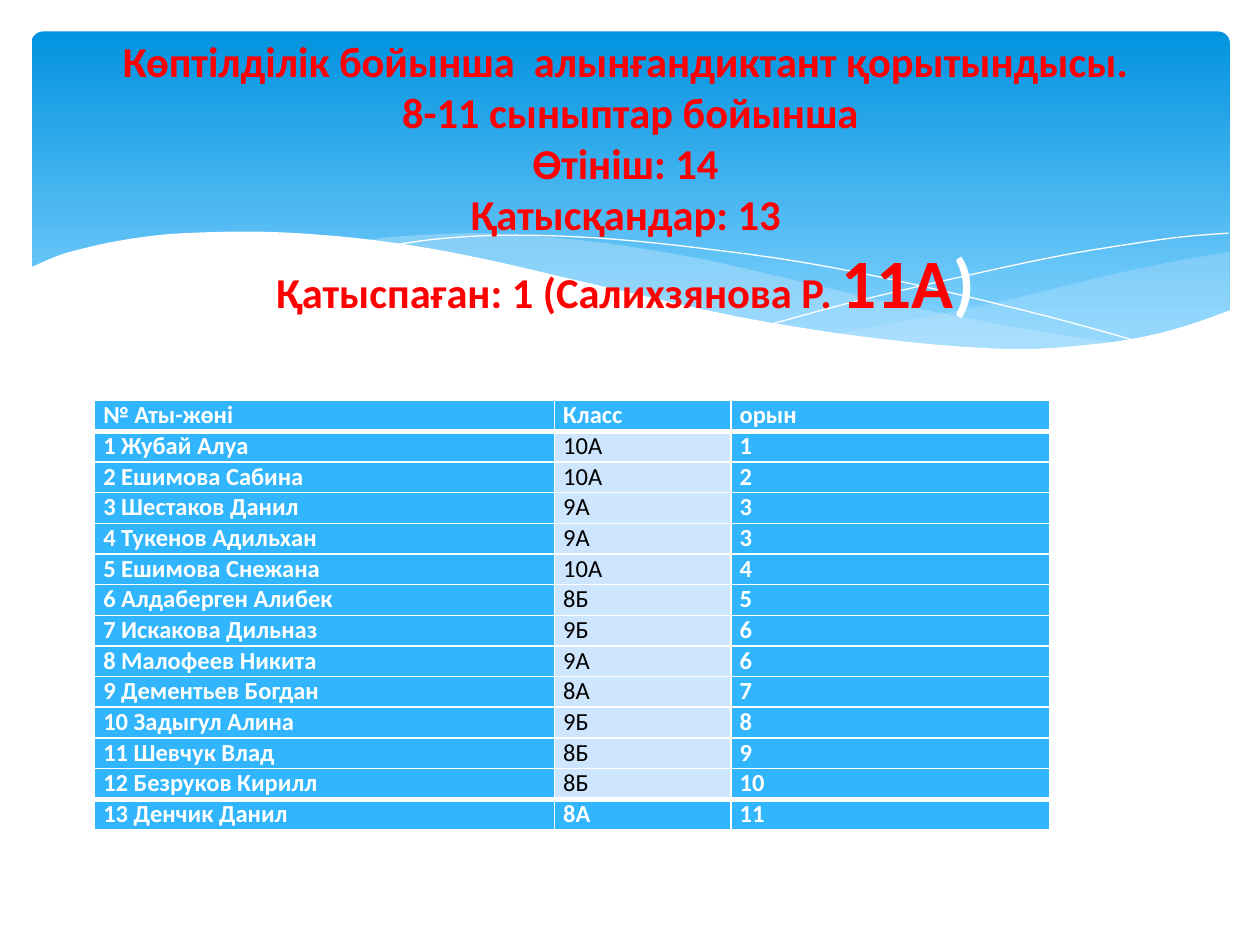
from lxml.etree import SubElement
from pptx import Presentation
from pptx.dml.color import RGBColor
from pptx.enum.shapes import MSO_SHAPE
from pptx.enum.text import MSO_ANCHOR, PP_ALIGN
from pptx.oxml.ns import qn
from pptx.util import Inches, Pt

BACK_TOP = [(9.76, 2), (9.35, 2.07), (8.91, 2.16), (8.61, 2.23), (8.05, 2.37),
            (7.53, 2.48), (7.06, 2.57), (6.61, 2.65)]
BACK_BOTTOM = [(6.61, 2.65), (7.05, 2.71), (7.57, 2.76), (8.03, 2.78), (8.44, 2.77),
               (8.81, 2.73), (9.13, 2.67), (9.42, 2.59), (9.76, 2.47)]
MIDDLE_TOP = [(8.93, 2.73), (8.37, 2.65), (7.75, 2.54), (7.06, 2.4), (6.29, 2.22),
              (5.69, 2.08), (5.14, 1.98), (4.65, 1.91), (4.2, 1.87), (3.8, 1.85),
              (3.44, 1.86), (3.13, 1.88), (2.86, 1.91)]
MIDDLE_BOTTOM = [(2.86, 1.91), (3.42, 1.99), (4.04, 2.11), (4.91, 2.32), (5.66, 2.48),
                 (6.34, 2.61), (6.95, 2.7), (7.48, 2.76), (7.96, 2.78), (8.48, 2.77),
                 (8.93, 2.73)]
LONG_LINE = [(3.09, 1.95), (3.44, 1.9), (3.87, 1.87), (4.33, 1.87), (4.89, 1.9),
             (5.56, 1.97), (6.36, 2.08), (7.27, 2.26), (8.31, 2.51), (9.07, 2.72)]
SHORT_LINE = [(6.13, 2.57), (6.72, 2.41), (7.48, 2.23), (8.36, 2.04), (8.95, 1.94),
              (9.38, 1.88), (9.75, 1.85)]
FRONT_TOP = [(9.77, 2.46), (9.4, 2.59), (8.99, 2.69), (8.5, 2.75), (8.09, 2.77),
             (7.61, 2.75), (7.08, 2.7), (6.48, 2.62), (5.79, 2.5), (5.03, 2.33),
             (4.47, 2.2), (3.91, 2.07), (3.4, 1.97), (2.92, 1.9), (2.5, 1.86),
             (2.11, 1.84), (1.77, 1.84), (1.32, 1.86), (0.95, 1.91), (0.67, 1.97),
             (0.46, 2.03), (0.23, 2.13)]
FRONT_CORNERS = [(0.23, 3.29), (9.77, 3.29)]

RED = {"size": 24.3, "color": "FF0000", "bold": True}
BIG = {**RED, "size": 39.6}
TITLE = [
    [("Көптілділік бойынша  алынғандиктант қорытындысы.", RED)],
    [(" 8-11 сыныптар бойынша", RED)],
    [("Өтініш: 14", RED)],
    [("Қатысқандар: 13", RED)],
    [("Қатыспаған: 1 (Салихзянова Р. ", RED), ("11А", BIG), (")", {**BIG, "color": "FFFFFF"})],
]
ROWS = [
    ("№ Аты-жөні", "Класс", "орын"),
    ("1 Жубай Алуа", "10А", "1"),
    ("2 Ешимова Сабина", "10А", "2"),
    ("3 Шестаков Данил", "9А", "3"),
    ("4 Тукенов Адильхан", "9А", "3"),
    ("5 Ешимова Снежана", "10А", "4"),
    ("6 Алдаберген Алибек", "8Б", "5"),
    ("7 Искакова Дильназ", "9Б", "6"),
    ("8 Малофеев Никита", "9А", "6"),
    ("9 Дементьев Богдан", "8А", "7"),
    ("10 Задыгул Алина", "9Б", "8"),
    ("11 Шевчук Влад", "8Б", "9"),
    ("12 Безруков Кирилл", "8Б", "10"),
    ("13 Денчик Данил", "8А", "11"),
]


def rgb(value):
    return RGBColor.from_string(value)


def add_text(p, text, size=14, color="FFFFFF", bold=False, font="Calibri"):
    r = p.add_run()
    r.text = text
    r.font.size, r.font.bold, r.font.name = Pt(size), bold, font
    r.font.color.rgb = rgb(color)


def smooth(points, steps=4):
    ends = [points[0], *points, points[-1]]
    curve = [points[0]]
    for a, b, c, d in zip(ends, ends[1:], ends[2:], ends[3:]):
        for t in (i / steps for i in range(1, steps + 1)):
            curve.append(tuple(
                (2 * q + (s - o) * t + (2 * o - 5 * q + 4 * s - u) * t ** 2
                 + (3 * q - o - 3 * s + u) * t ** 3) / 2
                for o, q, s, u in zip(a, b, c, d)))
    return curve


class Deck:
    """Holds the style and the current slide."""

    accent, pale, white, veil = "31B6FD", "CEE5FE", "FFFFFF", "C6E7FC"

    def __init__(self, prs):
        self.s = prs.slides.add_slide(prs.slide_layouts[6])

    def banner(self, x, y, w, h, stops):
        sp = self.s.shapes.add_shape(MSO_SHAPE.ROUNDED_RECTANGLE,
                                     Inches(x), Inches(y), Inches(w), Inches(h))
        sp.adjustments[0] = 0.034
        sp.shadow.inherit = False
        sp.line.fill.background()
        sp.fill.gradient()
        sp.fill.gradient_angle = 270
        for stop, (position, color) in zip(sp.fill.gradient_stops, stops):
            stop.position = position
            stop.color.rgb = rgb(color)

    def outline(self, points, close):
        (x, y), *rest = [(Inches(px), Inches(py)) for px, py in points]
        builder = self.s.shapes.build_freeform(x, y)
        builder.add_line_segments(rest, close=close)
        sp = builder.convert_to_shape()
        sp.shadow.inherit = False
        return sp

    def wave(self, points, color, alpha=None):
        sp = self.outline(points, True)
        sp.line.fill.background()
        sp.fill.solid()
        sp.fill.fore_color.rgb = rgb(color)
        if alpha:
            clr = sp.fill._xPr.find(".//" + qn("a:srgbClr"))
            SubElement(clr, qn("a:alpha"), val=str(alpha * 1000))

    def curve(self, points):
        sp = self.outline(points, False)
        sp.fill.background()
        sp.line.color.rgb = rgb(self.white)
        sp.line.width = Pt(0)

    def borders(self, cell, **widths):
        tc_pr = cell._tc.get_or_add_tcPr()
        for side in "LRTB":
            ln = SubElement(tc_pr, qn("a:ln" + side), w=str(Pt(widths.get(side, 1))))
            SubElement(SubElement(ln, qn("a:solidFill")), qn("a:srgbClr"), val=self.white)

    def table(self, x, y, widths, height, rows):
        last = len(rows) - 1
        table = self.s.shapes.add_table(len(rows), len(widths), Inches(x), Inches(y),
                                        Inches(sum(widths)), Inches(height)).table
        table.first_row = table.horz_banding = False
        for column, width in zip(table.columns, widths):
            column.width = Inches(width)
        for i, row in enumerate(rows):
            for j, text in enumerate(row):
                cell = table.cell(i, j)
                plain = j == 1 and 0 < i < last
                self.borders(cell, T=3 if i in (1, last) else 1,
                             B=3 if i in (0, last - 1) else 1)
                cell.fill.solid()
                cell.fill.fore_color.rgb = rgb(self.pale if plain else self.accent)
                cell.margin_left = cell.margin_right = Inches(0.07)
                cell.margin_top = cell.margin_bottom = 0
                add_text(cell.text_frame.paragraphs[0], text,
                         color="000000" if plain else self.white, bold=not plain)

    def title(self, x, y, w, h, lines):
        tf = self.s.shapes.add_textbox(Inches(x), Inches(y), Inches(w), Inches(h)).text_frame
        tf.word_wrap = True
        tf.vertical_anchor = MSO_ANCHOR.MIDDLE
        tf.margin_bottom = Inches(0.62)
        for i, line in enumerate(lines):
            p = tf.add_paragraph() if i else tf.paragraphs[0]
            p.alignment = PP_ALIGN.CENTER
            for text, style in line:
                add_text(p, text, **style)


def main():
    prs = Presentation()
    prs.slide_width, prs.slide_height = Inches(10), Inches(7.5)
    deck = Deck(prs)
    deck.banner(0.25, 0.25, 9.51, 2.7, [(0, "0293E0"), (0.9, "83D3FE")])
    deck.wave(smooth(BACK_TOP) + smooth(BACK_BOTTOM), deck.veil, 29)
    deck.wave(smooth(MIDDLE_TOP) + smooth(MIDDLE_BOTTOM), deck.veil, 40)
    deck.curve(smooth(LONG_LINE))
    deck.curve(smooth(SHORT_LINE))
    deck.wave(smooth(FRONT_TOP) + FRONT_CORNERS, deck.white)
    deck.table(0.75, 3.18, [3.65, 1.4, 2.53], 3.41, ROWS)
    deck.title(0.43, 0.68, 9.07, 2.05, TITLE)
    prs.save("out.pptx")


if __name__ == "__main__":
    main()
